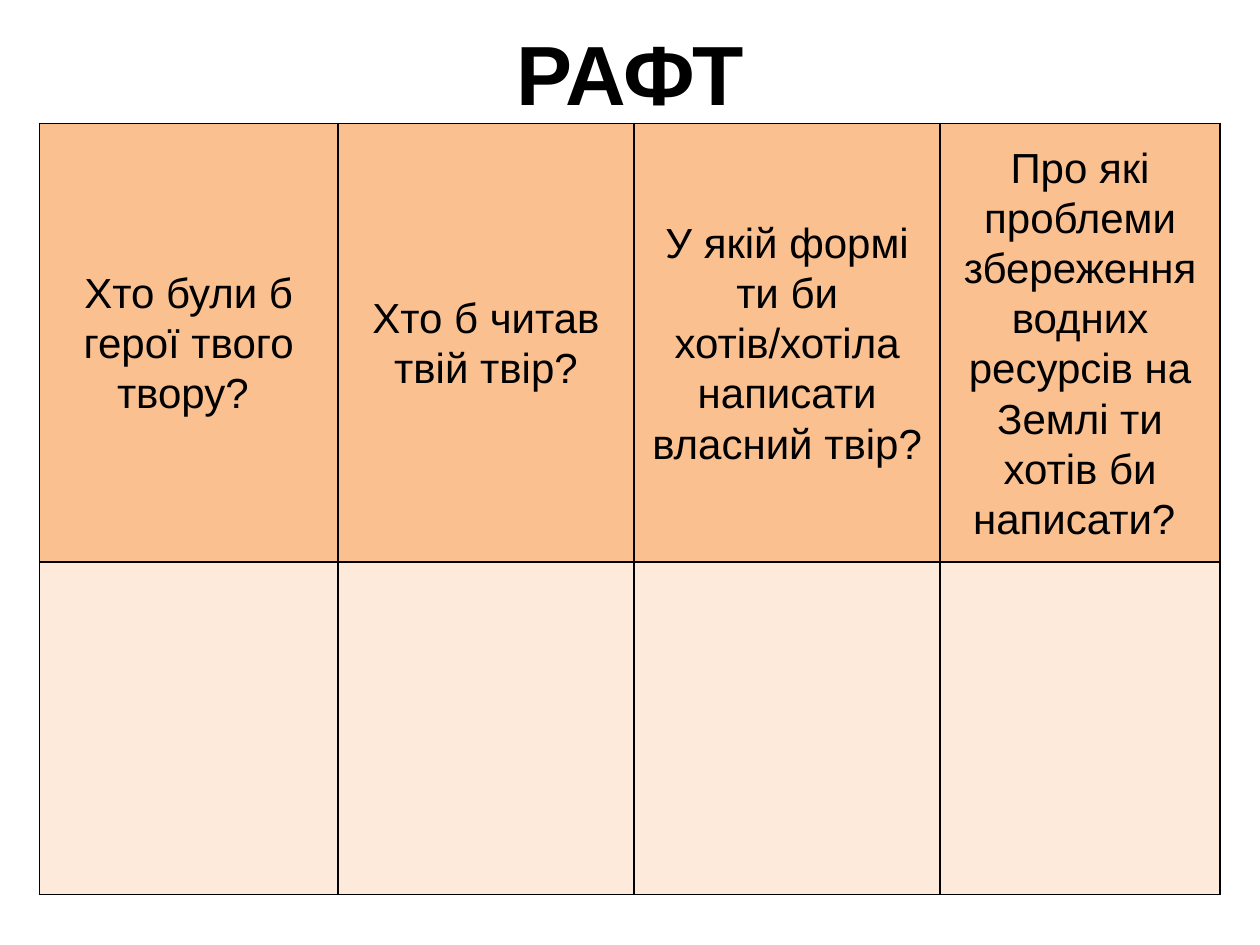
from lxml import etree
from pptx import Presentation
from pptx.dml.color import RGBColor
from pptx.enum.text import MSO_ANCHOR, MSO_AUTO_SIZE, PP_ALIGN
from pptx.oxml.ns import qn
from pptx.util import Pt

MIDDLE = MSO_ANCHOR.MIDDLE
CENTER = PP_ALIGN.CENTER
FIT_SHAPE = MSO_AUTO_SIZE.SHAPE_TO_FIT_TEXT
TITLE_ONLY = 5

BLACK = RGBColor(0x00, 0x00, 0x00)
ORANGE = RGBColor(0xFA, 0xC0, 0x90)
PALE_ORANGE = RGBColor(0xFD, 0xEA, 0xDA)

QUESTIONS = [
    "Хто були б герої твого твору? ",
    "Хто б читав твій твір?",
    "У якій формі ти би хотів/хотіла написати власний твір?",
    "Про які проблеми збереження водних ресурсів на Землі ти хотів би написати? ",
]
COLUMN_WIDTHS = [170.64, 169.2, 174.96, 159.84]
ROW_HEIGHTS = [250.56, 190.08]
ROW_FILLS = [ORANGE, PALE_ORANGE]


def format_paragraph(paragraph, size, bold):
    paragraph.alignment = CENTER
    paragraph.font.name = "Arial"
    paragraph.font.size = Pt(size)
    paragraph.font.bold = bold
    paragraph.font.color.rgb = BLACK


def add_borders(cell):
    properties = cell._tc.get_or_add_tcPr()
    for index, side in enumerate(("a:lnL", "a:lnR", "a:lnT", "a:lnB")):
        line = etree.Element(qn(side), w=str(Pt(1)))
        fill = etree.SubElement(line, qn("a:solidFill"))
        etree.SubElement(fill, qn("a:srgbClr"), val=str(BLACK))
        # Borders must come before the cell fill
        properties.insert(index, line)


presentation = Presentation()
presentation.slide_width = Pt(720)
presentation.slide_height = Pt(540)
slide = presentation.slides.add_slide(presentation.slide_layouts[TITLE_ONLY])

# Title
title = slide.shapes.title
title.left, title.top, title.width, title.height = Pt(287.5), Pt(8.5), Pt(145), Pt(65.5)
title_frame = title.text_frame
title_frame.text = "РАФТ"
title_frame.word_wrap = False
title_frame.auto_size = FIT_SHAPE
title_frame.vertical_anchor = MIDDLE
format_paragraph(title_frame.paragraphs[0], 48, True)

# Table grid
table = slide.shapes.add_table(
    len(ROW_HEIGHTS), len(COLUMN_WIDTHS),
    Pt(22.5), Pt(70.5), Pt(sum(COLUMN_WIDTHS)), Pt(sum(ROW_HEIGHTS)),
).table
for column, width in zip(table.columns, COLUMN_WIDTHS):
    column.width = Pt(width)

# Cell fills and borders
for row, height, color in zip(table.rows, ROW_HEIGHTS, ROW_FILLS):
    row.height = Pt(height)
    for cell in row.cells:
        cell.fill.solid()
        cell.fill.fore_color.rgb = color
        add_borders(cell)

# Questions
for cell, question in zip(table.rows[0].cells, QUESTIONS):
    cell.text = question
    cell.vertical_anchor = MIDDLE
    cell.margin_left = cell.margin_right = Pt(5)
    cell.margin_top = cell.margin_bottom = Pt(0)
    paragraph = cell.text_frame.paragraphs[0]
    paragraph.line_spacing = 1.07
    format_paragraph(paragraph, 24, False)

presentation.save("out.pptx")
